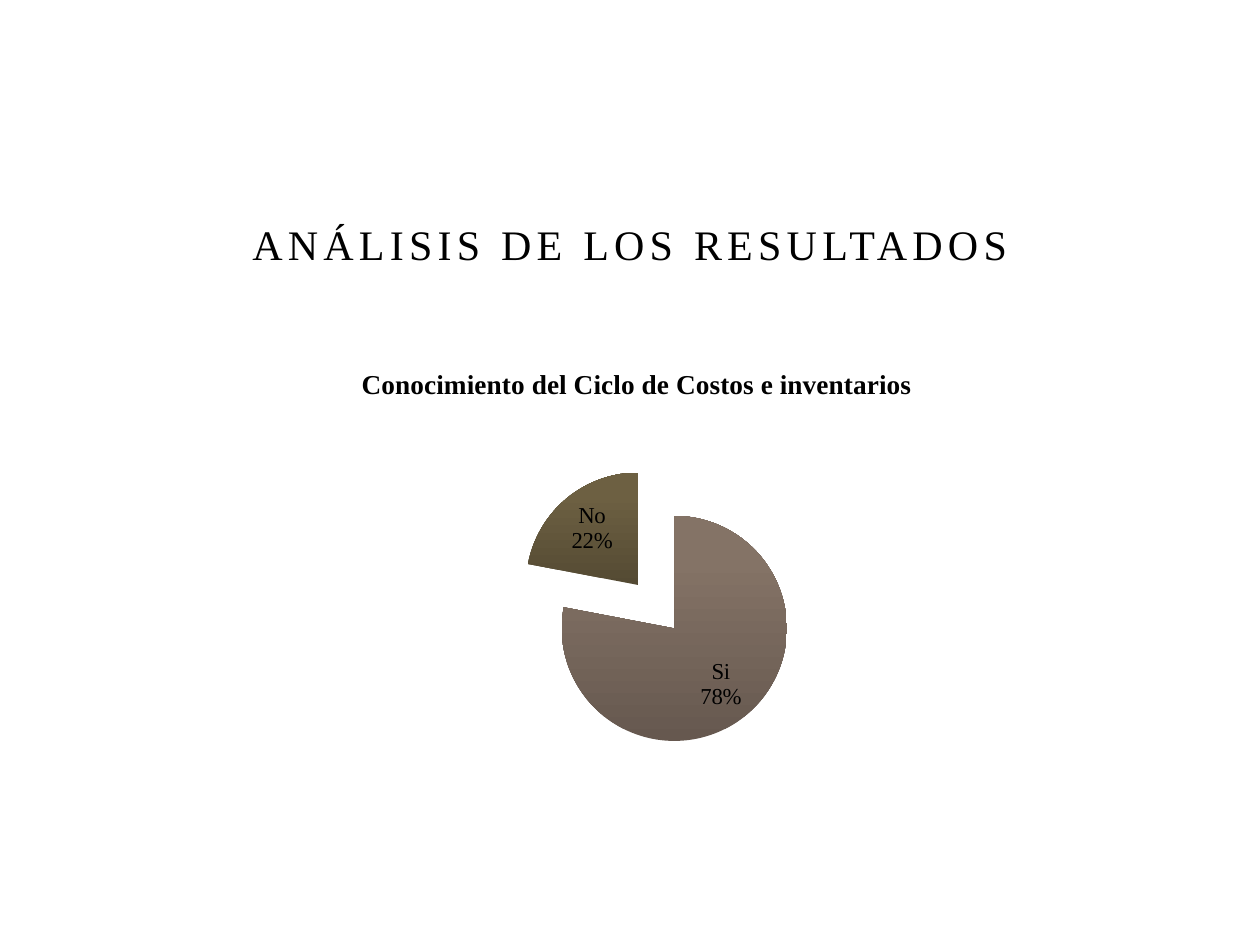
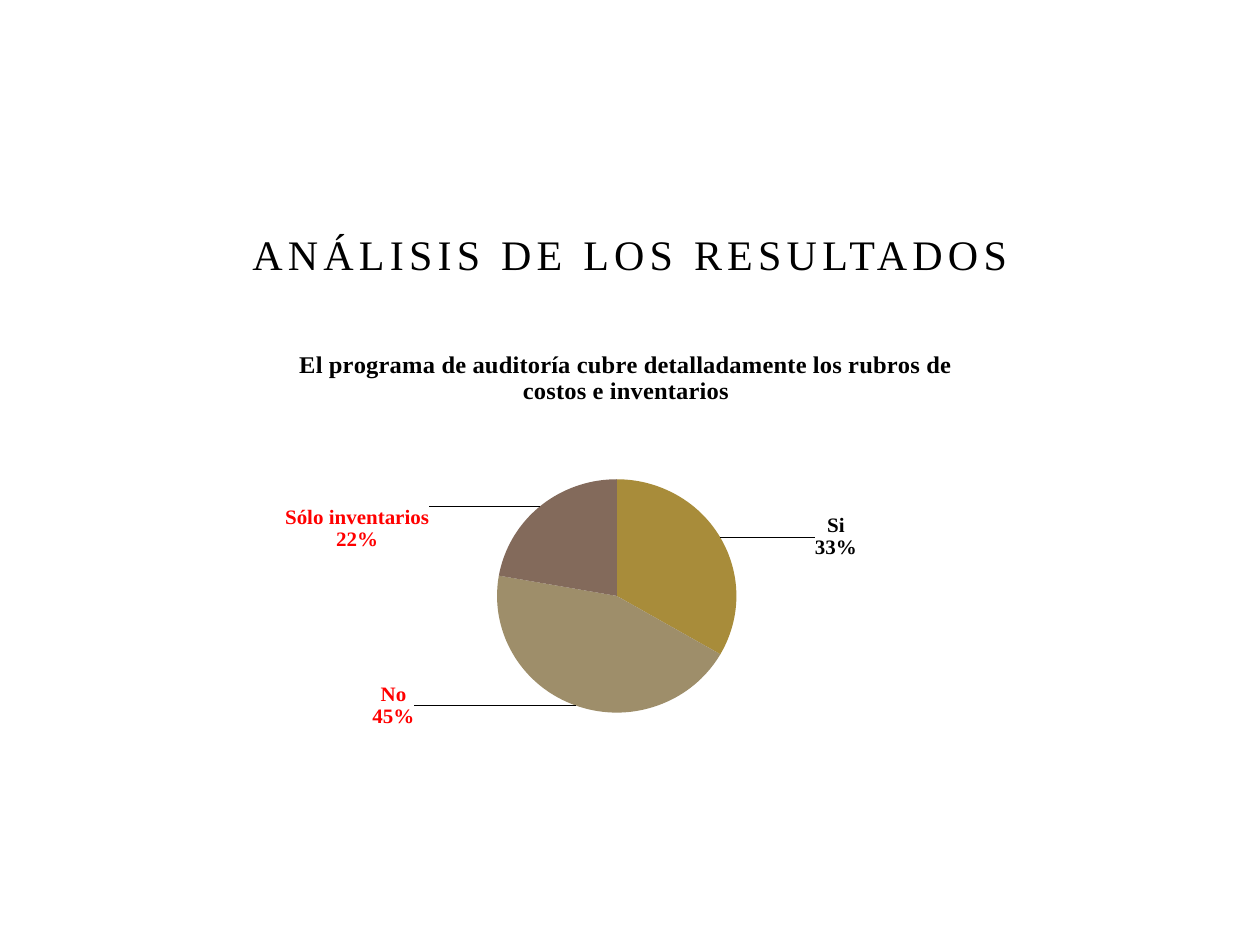
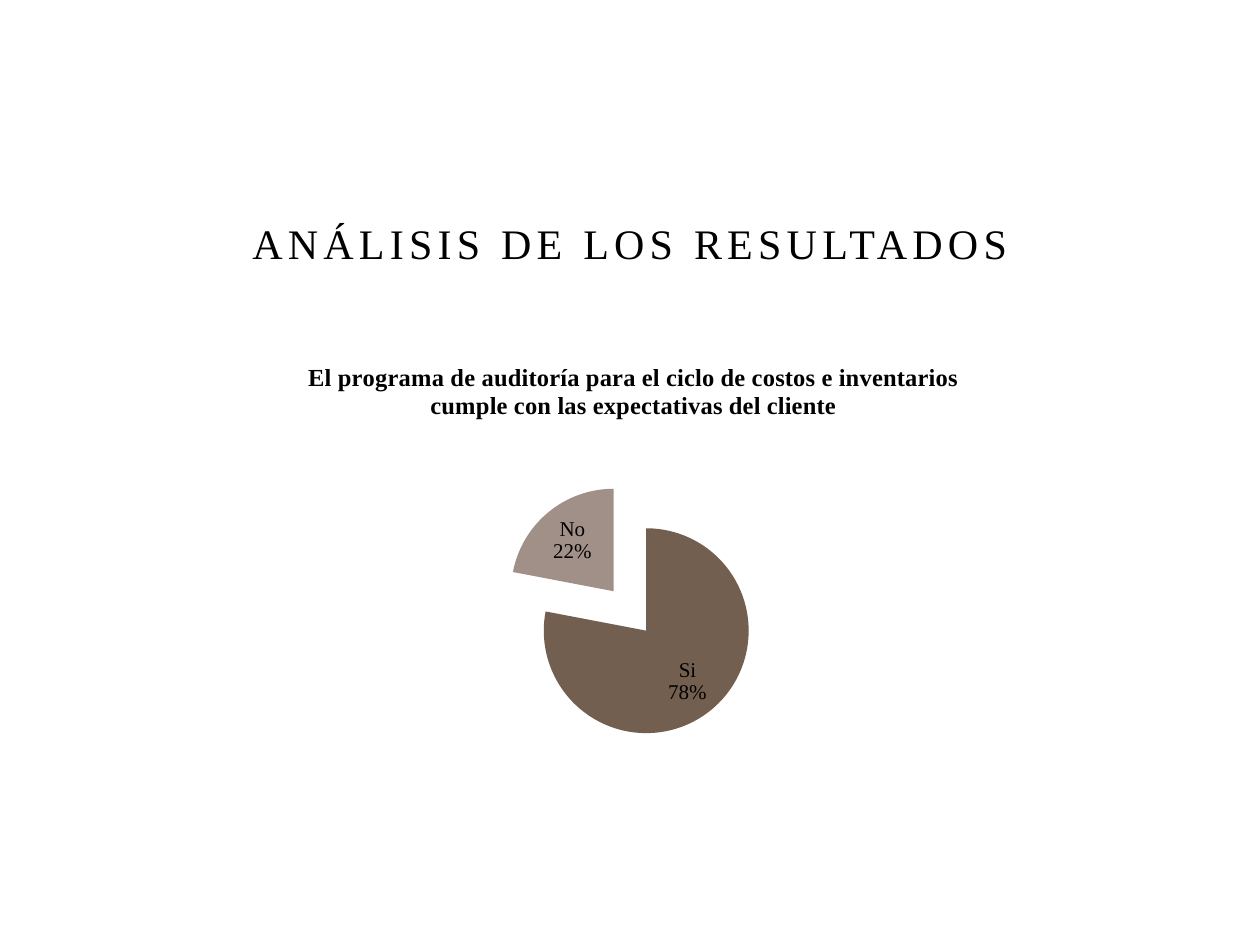
from copy import deepcopy

from lxml.etree import SubElement
from pptx import Presentation
from pptx.chart.data import CategoryChartData as ChartData
from pptx.dml.color import RGBColor as RGB
from pptx.enum.chart import XL_CHART_TYPE as Kind, XL_LABEL_POSITION as Spot
from pptx.enum.text import MSO_ANCHOR as Anchor, MSO_AUTO_SIZE as Fit, PP_ALIGN as Align
from pptx.oxml import parse_xml
from pptx.oxml.ns import nsdecls, qn
from pptx.util import Emu, Pt

SCALE = 914400 / 126
FONT = "Times New Roman"
BLACK = RGB(0, 0, 0)
RED = RGB(255, 0, 0)
GOLD = RGB(0xA8, 0x8C, 0x3A)
SAND = RGB(0x9E, 0x8E, 0x6A)
CLAY = RGB(0x83, 0x6A, 0x5B)
GREY = RGB(0xAE, 0xAF, 0xA9)
BROWN = RGB(0x73, 0x5F, 0x4F)
MAUVE = RGB(0xA0, 0x90, 0x88)
TAUPE = [RGB(0x66, 0x58, 0x4F), RGB(0x84, 0x73, 0x66), RGB(0x86, 0x73, 0x66)]
OLIVE = [RGB(0x54, 0x4A, 0x33), RGB(0x6D, 0x60, 0x42), RGB(0x6E, 0x61, 0x41)]
STOPS = [0, 0.8, 1]

LEFT, WIDTH = 189, 882
HEAD_TOP, PIE_TOP, PIE_HIGH = 179, 336, 420


def px(n):
    return Emu(round(n * SCALE))


def style(font, size, color=BLACK, bold=False):
    font.name = FONT
    font.size = Pt(size)
    font.bold = bold
    font.color.rgb = color


def add_head(deck, high):
    slide = deck.slides.add_slide(deck.slide_layouts[5])
    head = slide.shapes.title
    head.left, head.top, head.width, head.height = map(px, (LEFT, HEAD_TOP, WIDTH, high))
    frame = head.text_frame
    frame.auto_size = Fit.NONE
    frame.vertical_anchor = Anchor.BOTTOM
    para = frame.paragraphs[0]
    para.alignment = Align.CENTER
    run = para.add_run()
    run.text = "ANÁLISIS DE LOS RESULTADOS"
    style(run.font, 24)
    run.font._element.set("spc", "300")
    return slide


def place(node, index, **spots):
    """Give a chart part a manual layout, as child number index."""
    for old in node.findall(qn("c:layout")):
        node.remove(old)
    layout = parse_xml(f"<c:layout {nsdecls('c')}><c:manualLayout/></c:layout>")
    for name, val in spots.items():
        SubElement(layout[0], qn(f"c:{name}")).set("val", str(val))
    node.insert(index, layout)


def add_pie(slide, title, size, corner, plot, slices):
    """Add a pie; slices holds (name, value) pairs and plot its inner box."""
    data = ChartData()
    data.categories = [name for name, _ in slices]
    data.add_series("Series 1", [val for _, val in slices])
    box = map(px, (LEFT, PIE_TOP, WIDTH, PIE_HIGH))
    chart = slide.shapes.add_chart(Kind.PIE, *box, data).chart
    chart.has_legend = False
    chart.has_title = True
    para = chart.chart_title.text_frame.paragraphs[0]
    para.alignment = Align.CENTER
    run = para.add_run()
    run.text = title
    style(run.font, size, bold=True)
    x, y = corner
    place(chart.chart_title._element, 1, xMode="edge", yMode="edge", x=x, y=y)
    x, y, w, h = plot
    area = chart._chartSpace.find(".//" + qn("c:plotArea"))
    place(area, 0, layoutTarget="inner", xMode="edge", yMode="edge", x=x, y=y, w=w, h=h)
    chart.plots[0].vary_by_categories = True
    return chart.plots[0].series[0]


def paint(pie, colors):
    """Fill each slice with one colour, or with a list of gradient colours."""
    for i, color in enumerate(colors):
        fill = pie.points[i].format.fill
        if isinstance(color, RGB):
            fill.solid()
            fill.fore_color.rgb = color
            continue
        fill.gradient()
        fill.gradient_angle = 90
        stops = pie._element.findall(qn("c:dPt"))[i].find(".//" + qn("a:gsLst"))
        stops.append(deepcopy(stops[0]))
        for stop, spot, tone in zip(fill.gradient_stops, STOPS, color):
            stop.position = spot
            stop.color.rgb = tone


def explode(pie, amount):
    point = pie._element.find(qn("c:dPt"))
    point.addprevious(parse_xml(f'<c:explosion {nsdecls("c")} val="{amount}"/>'))


def show_share(node):
    """Show name and percentage on two lines."""
    for flag, val in (("showVal", 0), ("showCatName", 1), ("showPercent", 1)):
        node.find(qn(f"c:{flag}")).set("val", str(val))
    gap = parse_xml(f"<c:separator {nsdecls('c')}>\n</c:separator>")
    node.find(qn("c:showBubbleSize")).addnext(gap)


def add_labels(pie, size, spot, bold=False):
    labels = pie.data_labels
    style(labels.font, size, bold=bold)
    labels.number_format = "0%"
    labels.number_format_is_linked = False
    labels.position = spot
    show_share(labels._element)


def find_label(pie, index):
    for node in pie._element.iter(qn("c:dLbl")):
        if node.find(qn("c:idx")).get("val") == str(index):
            return node


def move_label(pie, index, x, y, lines=()):
    """Shift a label by chart fractions; lines replace its text, in red."""
    label = pie.points[index].data_label
    if lines:
        frame = label.text_frame
        for i, line in enumerate(lines):
            para = frame.add_paragraph() if i else frame.paragraphs[0]
            run = para.add_run()
            run.text = line
            style(run.font, 12, RED, True)
    else:
        style(label.font, 12, bold=True)
    label.position = Spot.OUTSIDE_END
    node = find_label(pie, index)
    show_share(node)
    place(node, 1, x=x, y=y)


def hide_label(pie, index):
    style(pie.points[index].data_label.font, 12)
    node = find_label(pie, index)
    for part in node[1:]:
        node.remove(part)
    SubElement(node, qn("c:delete")).set("val", "1")


def add_known(deck):
    pie = add_pie(add_head(deck, 96), "Conocimiento del Ciclo de Costos e inventarios", 15.6,
                  (0.19, 0.06), (0.29, 0.31, 0.48, 0.67), [("Si", 78), ("No", 22)])
    paint(pie, [TAUPE, OLIVE])
    explode(pie, 25)
    add_labels(pie, 13, Spot.INSIDE_END)


def add_cover(deck):
    pie = add_pie(add_head(deck, 106), "El programa de auditoría cubre detalladamente "
                  "los rubros de costos e inventarios", 14,
                  (0.12, 0.02), (0.29, 0.35, 0.39, 0.57),
                  [("Si", 33), ("No", 44), ("Sólo inventarios", 22), ("Sólo costos", 0)])
    paint(pie, [GOLD, SAND, CLAY, GREY])
    add_labels(pie, 12, Spot.OUTSIDE_END, True)
    move_label(pie, 0, 0.1, 0.06)
    move_label(pie, 1, -0.18, -0.07, ["No", "45%"])
    move_label(pie, 2, -0.12, 0.12, ["Sólo inventarios", "22%"])
    hide_label(pie, 3)


def add_hopes(deck):
    pie = add_pie(add_head(deck, 95), "El programa de auditoría para el ciclo de costos e "
                  "inventarios cumple con las expectativas del cliente", 14,
                  (0.13, 0.05), (0.31, 0.35, 0.38, 0.61), [("Si", 78), ("No", 22)])
    paint(pie, [BROWN, MAUVE])
    explode(pie, 25)
    add_labels(pie, 12, Spot.INSIDE_END)


def main():
    deck = Presentation()
    deck.slide_width, deck.slide_height = px(1260), px(945)
    add_known(deck)
    add_cover(deck)
    add_hopes(deck)
    deck.save("out.pptx")


if __name__ == "__main__":
    main()
